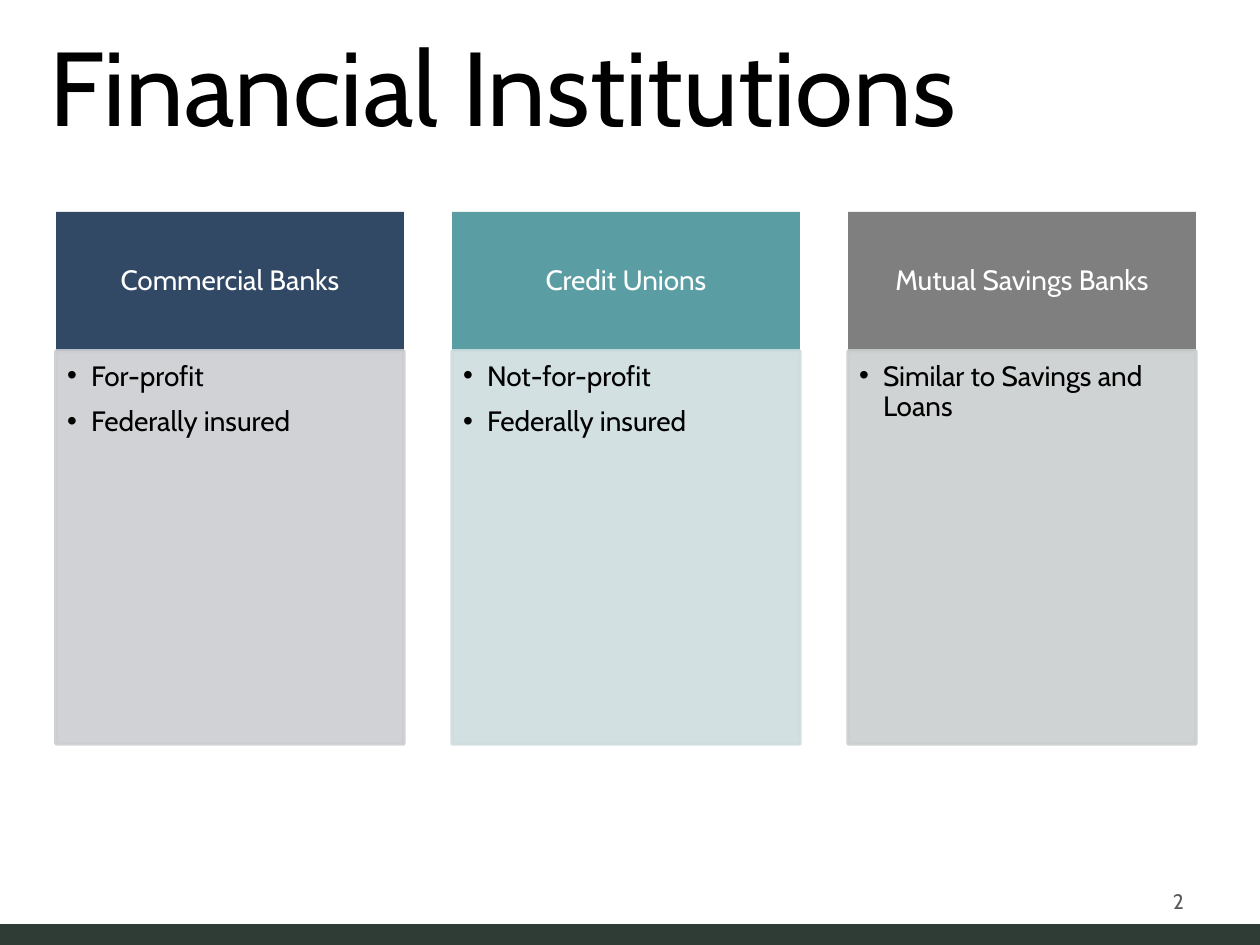
from lxml import etree
from pptx import Presentation
from pptx import util as u
from pptx.dml.color import RGBColor
from pptx.enum import shapes, text
from pptx.oxml.ns import qn

TITLE = "Financial Institutions"
PAGE = "2"
BANKS = [
    ("Commercial Banks", "324966", "CCCED2", ["For-profit", "Federally insured"]),
    ("Credit Unions", "5A9EA4", "CEDDDF", ["Not-for-profit", "Federally insured"]),
    ("Mutual Savings Banks", "7F7F7F", "CBCFCF", ["Similar to Savings and Loans"]),
]
LEFT, STEP, WIDE = 56, 396, 348
HEAD_TOP, HEAD_H, BODY_H = 212, 139, 393
INDENT = 24


def px(n):
    return u.Emu(round(n * 914400 / 126))


def rgb(code):
    return RGBColor.from_string(code)


def fade(fill):
    """Make a solid fill 90% opaque."""
    color = fill._xPr.find(qn("a:solidFill"))[0]
    etree.SubElement(color, qn("a:alpha"), val="90000")


def bullet(para):
    props = para._p.get_or_add_pPr()
    props.set("marL", str(px(INDENT)))
    props.set("indent", str(-px(INDENT)))
    etree.SubElement(props, qn("a:buFont"), typeface="Arial")
    etree.SubElement(props, qn("a:buChar"), char="•")


def write(shape, lines, size=16, color="000000", align="LEFT", anchor="TOP",
          inset=(0, 0, 0, 0), spacing=None, dots=False):
    frame = shape.text_frame
    frame.word_wrap = True
    frame.auto_size = text.MSO_AUTO_SIZE.NONE
    frame.vertical_anchor = getattr(text.MSO_ANCHOR, anchor)
    (frame.margin_left, frame.margin_top,
     frame.margin_right, frame.margin_bottom) = map(px, inset)
    for i, line in enumerate(lines):
        para = frame.add_paragraph() if i else frame.paragraphs[0]
        para.alignment = getattr(text.PP_ALIGN, align)
        if spacing:
            para.line_spacing = spacing
        if i:
            para.space_before = u.Pt(8.9)
        if dots:
            bullet(para)
        run = para.add_run()
        run.text = line
        run.font.name, run.font.size = "Cabin", u.Pt(size)
        run.font.color.rgb = rgb(color)


def block(slide, x, y, w, h, fill, edge=False):
    box = slide.shapes.add_shape(shapes.MSO_SHAPE.RECTANGLE, *map(px, (x, y, w, h)))
    box.shadow.inherit = False
    box.fill.solid()
    box.fill.fore_color.rgb = rgb(fill)
    if edge:
        box.line.color.rgb = rgb(fill)
        box.line.width = u.Pt(2)
        fade(box.fill)
        fade(box.line.fill)
    else:
        box.line.fill.background()
    return box


def main():
    deck = Presentation()
    deck.slide_width, deck.slide_height = px(1260), px(945)
    slide = deck.slides.add_slide(deck.slide_layouts[5])

    rule = slide.shapes.add_connector(
        shapes.MSO_CONNECTOR.STRAIGHT, px(0), px(935), px(1260), px(935))
    rule.line.color.rgb = rgb("2F3C35")
    rule.line.width = u.Pt(12)
    etree.SubElement(rule._element.spPr, qn("a:effectLst"))

    title = slide.shapes.title
    title.left, title.top, title.width, title.height = map(px, (49, 21, 1197, 126))
    write(title, [TITLE], size=60)

    for i, (name, dark, pale, facts) in enumerate(BANKS):
        x = LEFT + i * STEP
        head = block(slide, x, HEAD_TOP, WIDE, HEAD_H, dark)
        write(head, [name], color="FFFFFF", align="CENTER", anchor="MIDDLE",
              inset=(15, 9, 15, 9), spacing=0.9)
        body = block(slide, x, HEAD_TOP + HEAD_H, WIDE, BODY_H, pale, edge=True)
        write(body, facts, inset=(11, 11, 15, 18), spacing=0.9, dots=True)

    number = slide.shapes.add_textbox(*map(px, (903, 876, 294, 50)))
    write(number, [PAGE], size=12, color="595959", align="RIGHT", anchor="MIDDLE",
          inset=(13, 6, 13, 6))
    deck.save("out.pptx")


if __name__ == "__main__":
    main()
